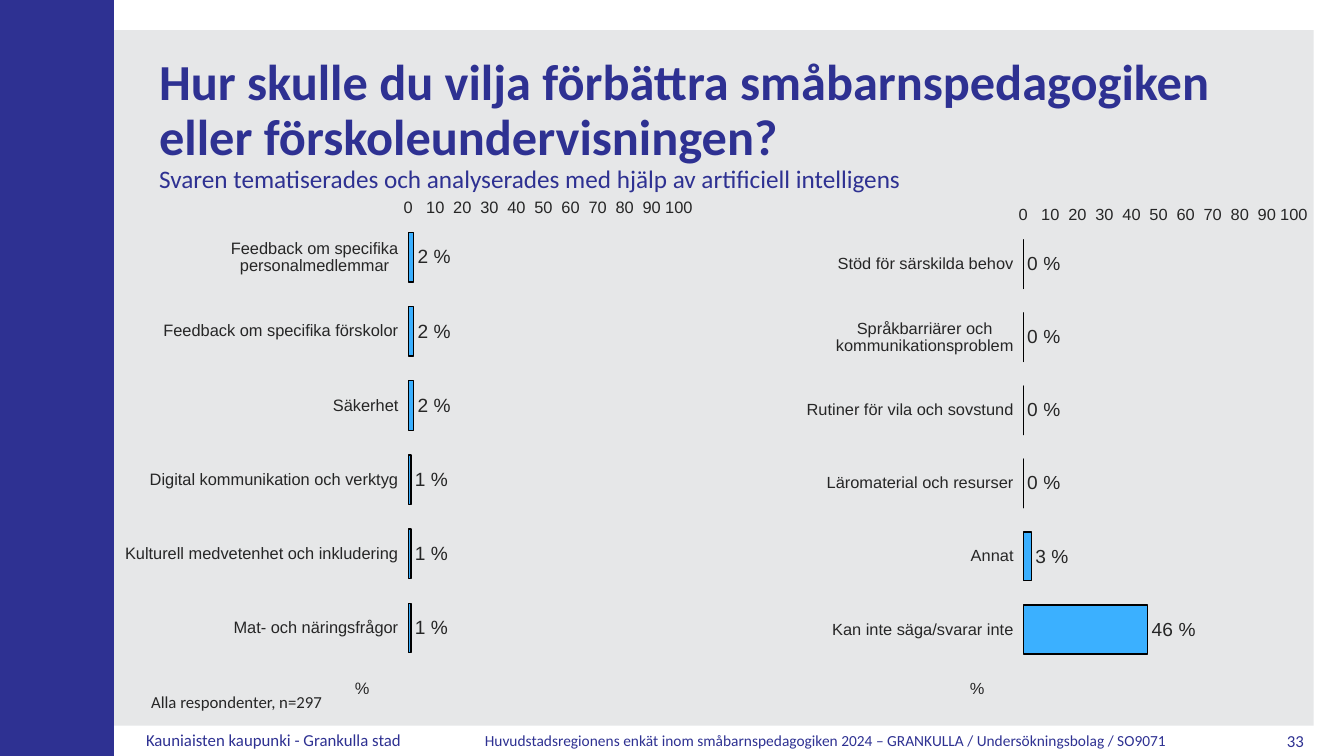
from lxml import etree
from pptx import Presentation
from pptx.chart.data import CategoryChartData
from pptx.dml.color import RGBColor
from pptx.enum.chart import (XL_AXIS_CROSSES, XL_CHART_TYPE, XL_LABEL_POSITION,
                             XL_TICK_LABEL_POSITION, XL_TICK_MARK)
from pptx.enum.shapes import MSO_SHAPE
from pptx.enum.text import MSO_ANCHOR, PP_ALIGN
from pptx.oxml.ns import qn
from pptx.util import Inches, Pt

NAVY, GREY, INK, BLUE, BLACK = "2E3192", "E6E7E8", "262626", "3BB0FF", "000000"


def rgb(value):
    return RGBColor.from_string(value)


def add_layout(parent, index, inner=False, **place):
    """Give a chart part a manual place, in fractions of the chart."""
    for old in parent.findall(qn("c:layout")):
        parent.remove(old)
    layout = etree.Element(qn("c:layout"))
    manual = etree.SubElement(layout, qn("c:manualLayout"))
    values = {"layoutTarget": "inner"} if inner else {}
    values.update(xMode="edge", yMode="edge", **place)
    for tag, value in values.items():
        etree.SubElement(manual, qn("c:" + tag)).set("val", str(value))
    parent.insert(index, layout)


class SlideBuilder:
    def __init__(self, slide, font="Calibri", chart_font="Arial"):
        self.s = slide
        self.font = font
        self.chart_font = chart_font

    def rect(self, x, y, w, h, color):
        sp = self.s.shapes.add_shape(MSO_SHAPE.RECTANGLE, Inches(x), Inches(y),
                                     Inches(w), Inches(h))
        sp.shadow.inherit = False
        sp.fill.solid()
        sp.fill.fore_color.rgb = rgb(color)
        sp.line.fill.background()

    def text(self, x, y, w, h, lines, color=NAVY, spacing=0.9,
             align=PP_ALIGN.LEFT, anchor=MSO_ANCHOR.TOP):
        """Each line is (text, size, bold); lines share one paragraph."""
        tf = self.s.shapes.add_textbox(Inches(x), Inches(y),
                                       Inches(w), Inches(h)).text_frame
        tf.word_wrap = True
        tf.vertical_anchor = anchor
        p = tf.paragraphs[0]
        p.alignment = align
        p.line_spacing = spacing
        p.font.name = self.font
        p.font.color.rgb = rgb(color)
        for i, (words, size, bold) in enumerate(lines):
            if i:
                p.add_line_break()
            r = p.add_run()
            r.text = words
            r.font.size = Pt(size)
            r.font.bold = bold

    def bar_chart(self, x, y, w, h, answers, plot_y, plot_h):
        data = CategoryChartData()
        data.categories = list(answers)
        data.add_series("Series 1", list(answers.values()))
        chart = self.s.shapes.add_chart(XL_CHART_TYPE.BAR_CLUSTERED, Inches(x), Inches(y),
                                        Inches(w), Inches(h), data).chart
        chart.has_legend = False
        chart.has_title = False
        chart.font.name = self.chart_font
        chart.font.size = Pt(14)
        chart.font.color.rgb = rgb(INK)

        # Axes
        cat, val = chart.category_axis, chart.value_axis
        for axis in (cat, val):
            axis.has_major_gridlines = False
            axis.major_tick_mark = axis.minor_tick_mark = XL_TICK_MARK.NONE
            axis.tick_labels.font.size = Pt(12)
            axis.format.line.fill.background()
        cat.reverse_order = True
        cat.crosses = XL_AXIS_CROSSES.MAXIMUM
        cat.tick_label_position = XL_TICK_LABEL_POSITION.LOW
        val.minimum_scale, val.maximum_scale, val.major_unit = 0, 100, 10
        p = val.axis_title.text_frame.paragraphs[0]
        p.text = "%"
        p.font.size = Pt(12)
        p.font.bold = False

        # Bars and labels
        plot = chart.plots[0]
        plot.gap_width = 50
        plot.vary_by_categories = False
        bars = plot.series[0]
        bars.format.fill.solid()
        bars.format.fill.fore_color.rgb = rgb(BLUE)
        bars.format.line.color.rgb = rgb(BLACK)
        bars.format.line.width = Pt(1)
        labels = bars.data_labels
        labels.show_value = True
        labels.position = XL_LABEL_POSITION.OUTSIDE_END
        labels.number_format = r"#,##0\ [$%]"
        labels.number_format_is_linked = False

        # Manual places of plot and axis title
        area = chart.element.find(".//" + qn("c:plotArea"))
        add_layout(area, 0, True, x=0.57, y=plot_y, w=0.48, h=plot_h)
        add_layout(area.find(".//" + qn("c:title")), 1, x=0.42, y=0.95)


def main():
    prs = Presentation()
    prs.slide_width, prs.slide_height = Inches(13.33), Inches(7.5)
    b = SlideBuilder(prs.slides.add_slide(prs.slide_layouts[6]))

    # Background
    b.rect(0.3, 0.3, 12.73, 6.9, GREY)
    b.rect(0, 0, 1.13, 7.5, NAVY)

    # Footer
    b.text(1.35, 7.23, 2.88, 0.28,
           [("Kauniaisten kaupunki - Grankulla stad", 12, False)], spacing=0.8)
    b.text(4.71, 7.22, 7.05, 0.28,
           [("Huvudstadsregionens enkät inom småbarnspedagogiken 2024 – "
             "GRANKULLA / Undersökningsbolag / SO9071", 11, False)])

    # Title and base
    b.text(1.48, 0.52, 11.5, 1.45,
           [("Hur skulle du vilja förbättra småbarnspedagogiken "
             "eller förskoleundervisningen? ", 36, True),
            ("Svaren tematiserades och analyserades med hjälp av "
             "artificiell intelligens", 18, False)], anchor=MSO_ANCHOR.MIDDLE)
    b.text(1.4, 6.84, 9.18, 0.28, [("Alla respondenter, n=297", 12, False)], INK)

    # Charts
    b.bar_chart(1.14, 1.97, 5.73, 5, {
        "Feedback om specifika personalmedlemmar": 2,
        "Feedback om specifika förskolor": 2,
        "Säkerhet": 2,
        "Digital kommunikation och verktyg": 1,
        "Kulturell medvetenhet och inkludering": 1,
        "Mat- och näringsfrågor": 1,
    }, 0.03, 0.9)
    b.bar_chart(7.24, 2.05, 5.73, 4.92, {
        "Stöd för särskilda behov": 0,
        "Språkbarriärer och kommunikationsproblem": 0,
        "Rutiner för vila och sovstund": 0,
        "Läromaterial och resurser": 0,
        "Annat": 3,
        "Kan inte säga/svarar inte": 46,
    }, 0.01, 0.92)

    # Slide number
    b.text(12.29, 7.2, 0.74, 0.3, [("33", 12, False)], spacing=1.0,
           align=PP_ALIGN.RIGHT, anchor=MSO_ANCHOR.MIDDLE)

    prs.save("out.pptx")


if __name__ == "__main__":
    main()
